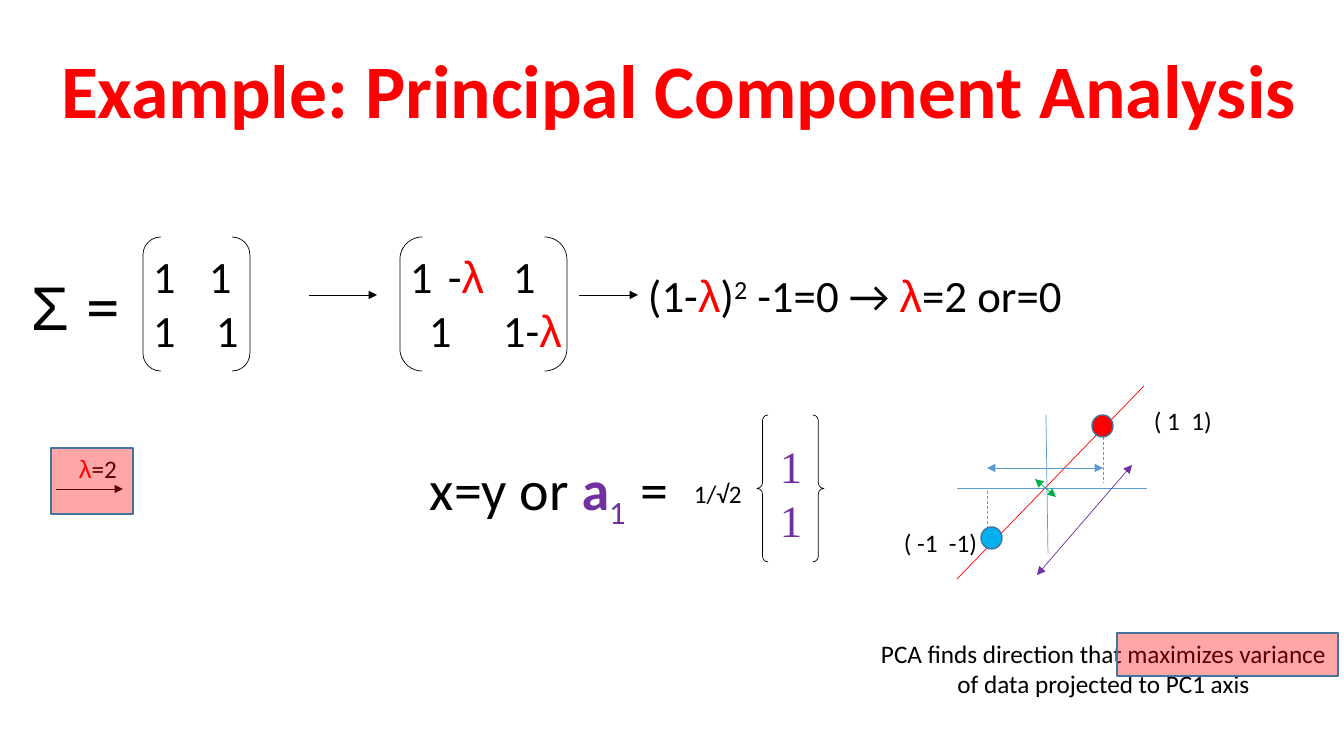
from lxml.etree import SubElement
from pptx import Presentation
from pptx.dml.color import RGBColor
from pptx.enum.dml import MSO_LINE
from pptx.enum.shapes import MSO_CONNECTOR, MSO_SHAPE
from pptx.enum.text import MSO_ANCHOR, MSO_AUTO_SIZE, PP_ALIGN
from pptx.oxml.ns import qn
from pptx.util import Pt

PX = 914400 / 100.8
COLOURS = {
    "black": "000000", "red": "FF0000", "purple": "7030A0", "axis": "5B9BD5",
    "outline": "43739E", "sky": "00B0F0", "green": "00B050",
}


def emu(*lengths):
    return [round(length * PX) for length in lengths]


def colour(name):
    return RGBColor.from_string(COLOURS[name])


deck = Presentation()
deck.slide_width, deck.slide_height = emu(1344, 756)
page = deck.slides.add_slide(deck.slide_layouts[5])

title = page.shapes.title
title.left, title.top, title.width, title.height = emu(51, 38, 1268, 102)
title.text_frame.word_wrap = False
title.text_frame.auto_size = MSO_AUTO_SIZE.NONE
title.text_frame.vertical_anchor = MSO_ANCHOR.TOP
para = title.text_frame.paragraphs[0]
para.alignment = PP_ALIGN.LEFT
span = para.add_run()
span.text = "Example: Principal Component Analysis"
span.font.name, span.font.size, span.font.bold = "Calibri", Pt(54), True
span.font.color.rgb = colour("red")

lines = [
    ((957, 579), (1144, 386), "red", "", False),
    ((309, 295), (377, 295), "black", "tail", False),
    ((579, 295), (638, 295), "black", "tail", False),
    ((56, 489), (123, 489), "black", "tail", False),
    ((1046, 415), (1048, 553), "axis", "", False),
    ((957, 488), (1147, 488), "axis", "", False),
    ((1103, 437), (1103, 483), "axis", "", True),
    ((987, 491), (987, 536), "axis", "", True),
    ((987, 468), (1103, 468), "axis", "head tail", False),
    ((1037, 575), (1132, 465), "purple", "head tail", False),
    ((1056, 497), (1035, 479), "green", "head tail", False),
]
for start, end, tint, arrows, dashed in lines:
    line = page.shapes.add_connector(MSO_CONNECTOR.STRAIGHT, *emu(*start, *end))
    line.line.color.rgb = colour(tint)
    line.line.width = Pt(0.5)
    if dashed:
        line.line.dash_style = MSO_LINE.DASH
    for arrow in arrows.split():
        SubElement(line.line._get_or_add_ln(), qn(f"a:{arrow}End"), type="triangle")
    SubElement(line._element.spPr, qn("a:effectLst"))

LAMBDA = ("λ", {"font": "Arial", "tint": "red"})
PURPLE_ONE = [("1", {"font": "Times New Roman", "tint": "purple"})]
texts = [
    ((21, 258, 122, 92), 44, "LEFT", [[("Σ ", {"font": "Arial"}), ("=", {"size": 48})]], []),
    ((143, 244, 107, 119), 32, "LEFT", [[("1\t1", {})], [("1\t1", {})]], [[56], [63]]),
    ((400, 244, 191, 119), 32, "LEFT",
     [[("1\t-", {}), LAMBDA, ("\t1", {})], [("\t1\t1-", {}), LAMBDA]],
     [[38, 103], [19, 93]]),
    ((638, 263, 690, 64), 32, "LEFT",
     [[("(1-", {}), LAMBDA, (")", {}), ("2", {"shift": 30}), (" -1=0 → ", {}),
       LAMBDA, ("=2 or=0", {})]], []),
    ((69, 448, 66, 40), 18, "LEFT", [[LAMBDA, ("=2", {})]], []),
    ((420, 450, 321, 78), 40, "LEFT",
     [[("x=y or ", {}), ("a", {"tint": "purple", "bold": True}),
       ("1  ", {"tint": "purple", "shift": -25}), ("=", {})]], []),
    ((770, 434, 46, 119), 32, "LEFT", [PURPLE_ONE, PURPLE_ONE], []),
    ((684, 473, 70, 40), 18, "LEFT", [[("1/√2", {})]], []),
    ((1144, 400, 80, 40), 18, "LEFT", [[("( 1  1)", {})]], []),
    ((894, 522, 95, 40), 18, "LEFT", [[("( -1  -1)", {})]], []),
    ((868, 633, 471, 72), 18, "CENTER",
     [[("PCA finds direction that maximizes variance", {})],
      [("of data projected to PC1 axis", {})]], []),
]
for place, size, align, rows, stops in texts:
    box = page.shapes.add_textbox(*emu(*place))
    frame = box.text_frame
    frame.word_wrap = False
    for index, row in enumerate(rows):
        para = frame.add_paragraph() if index else frame.paragraphs[0]
        para.alignment = PP_ALIGN[align]
        if stops:
            tabs = SubElement(para._p.get_or_add_pPr(), qn("a:tabLst"))
            for stop in emu(*stops[index]):
                SubElement(tabs, qn("a:tab"), pos=str(stop), algn="l")
        for words, style in row:
            span = para.add_run()
            span.text = words
            span.font.name = style.get("font", "Calibri")
            span.font.size = Pt(style.get("size", size))
            span.font.bold = style.get("bold", False)
            span.font.color.rgb = colour(style.get("tint", "black"))
            if "shift" in style:
                span._r.get_or_add_rPr().set("baseline", str(style["shift"] * 1000))

shapes = [
    (MSO_SHAPE.DOUBLE_BRACKET, (143, 237, 107, 134), None, "black", 0.5, 100),
    (MSO_SHAPE.DOUBLE_BRACKET, (400, 237, 167, 134), None, "black", 0.5, 100),
    (MSO_SHAPE.DOUBLE_BRACE, (757, 415, 67, 147), None, "black", 0.5, 100),
    (MSO_SHAPE.OVAL, (1092, 415, 21, 22), "red", "outline", 1, 100),
    (MSO_SHAPE.OVAL, (981, 527, 21, 22), "sky", "outline", 1, 100),
    (MSO_SHAPE.RECTANGLE, (51, 448, 82, 66), "red", "outline", 1, 35),
    (MSO_SHAPE.RECTANGLE, (1117, 633, 221, 43), "red", "outline", 1, 35),
]
for kind, place, fill, edge, weight, opacity in shapes:
    shape = page.shapes.add_shape(kind, *emu(*place))
    shape.shadow.inherit = False
    shape.line.color.rgb = colour(edge)
    shape.line.width = Pt(weight)
    if fill is None:
        shape.fill.background()
        continue
    shape.fill.solid()
    shape.fill.fore_color.rgb = colour(fill)
    if opacity < 100:
        tone = shape._element.spPr.find(qn("a:solidFill"))[0]
        SubElement(tone, qn("a:alpha"), val=str(opacity * 1000))

deck.save("out.pptx")
